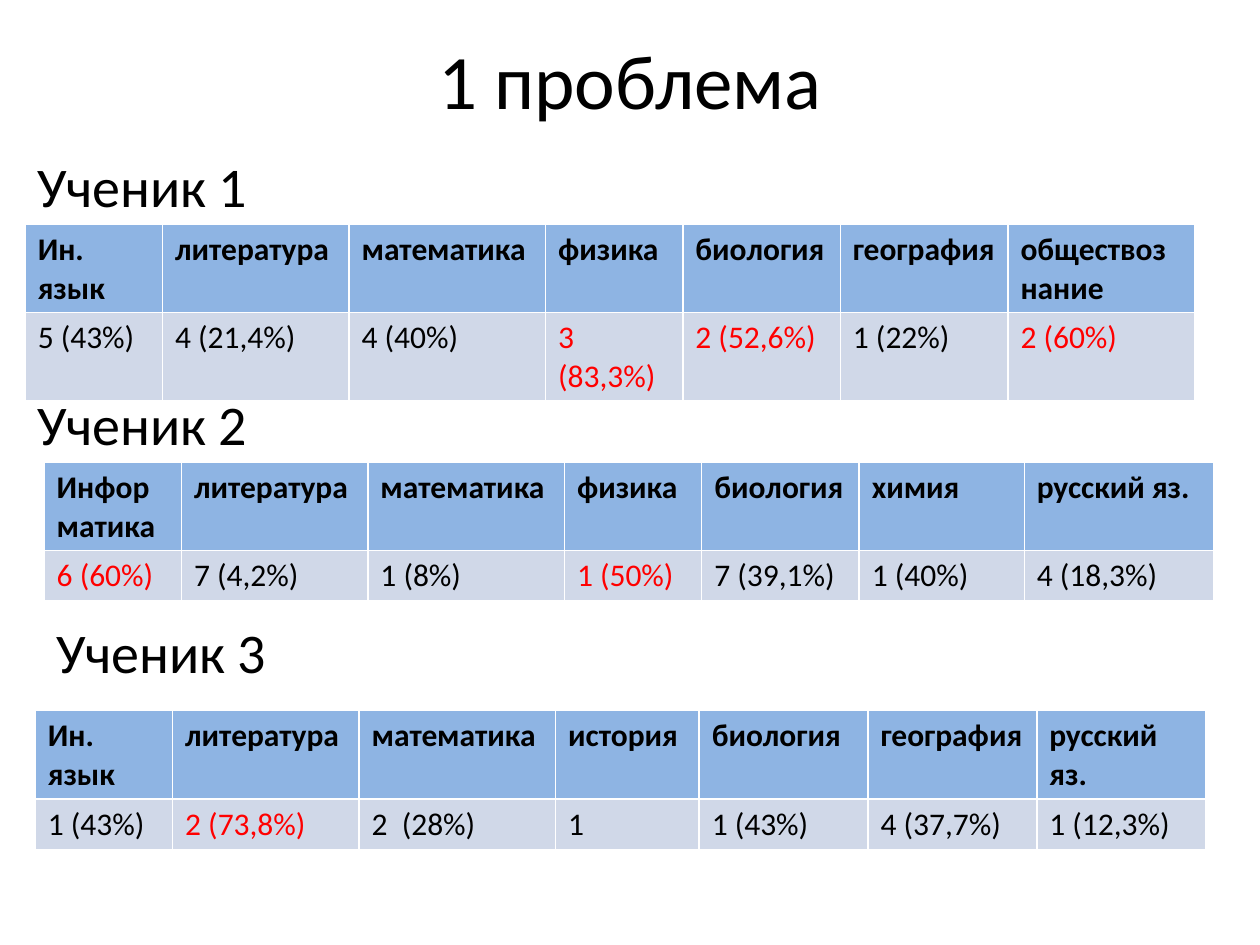
from dataclasses import dataclass

from pptx import Presentation
from pptx.dml.color import RGBColor
from pptx.enum.text import MSO_ANCHOR, PP_ALIGN
from pptx.slide import Slide
from pptx.text.text import TextFrame
from pptx.util import Inches, Pt

BLACK = RGBColor(0x00, 0x00, 0x00)
RED = RGBColor(0xFF, 0x00, 0x00)
HEADER_BLUE = RGBColor(0x8E, 0xB4, 0xE3)
ROW_BLUE = RGBColor(0xD0, 0xD8, 0xE8)
FONT = "Calibri"
ROW_HEIGHTS = (0.65, 0.37)


@dataclass(frozen=True)
class Label:
    text: str
    left: float
    top: float
    width: float


@dataclass(frozen=True)
class Grades:
    left: float
    top: float
    widths: tuple[float, ...]
    subjects: tuple[str, ...]
    marks: tuple[str, ...]
    flagged: tuple[int, ...]


LABELS = (
    Label("Ученик 1", 0.2, 1.15, 9),
    Label("Ученик 2", 0.2, 3.04, 5.12),
    Label("Ученик 3", 0.35, 4.85, 6.22),
)

TABLES = (
    Grades(
        0.2, 1.78, (1.09, 1.48, 1.56, 1.09, 1.25, 1.33, 1.48),
        ("Ин. язык", "литература", "математика", "физика", "биология",
         "география", "обществознание"),
        ("5 (43%)", "4 (21,4%)", "4 (40%)", "3 (83,3%)", "2 (52,6%)",
         "1 (22%)", "2 (60%)"),
        (3, 4, 6),
    ),
    Grades(
        0.35, 3.67, (1.09, 1.48, 1.56, 1.09, 1.25, 1.31, 1.5),
        ("Информатика", "литература", "математика", "физика", "биология",
         "химия", "русский яз."),
        ("6 (60%)", "7 (4,2%)", "1 (8%)", "1 (50%)", "7 (39,1%)",
         "1 (40%)", "4 (18,3%)"),
        (0, 3),
    ),
    Grades(
        0.28, 5.64, (1.09, 1.48, 1.56, 1.14, 1.34, 1.34, 1.34),
        ("Ин. язык", "литература", "математика", "история", "биология",
         "география", "русский яз."),
        ("1 (43%)", "2 (73,8%)", "2  (28%)", "1", "1 (43%)",
         "4 (37,7%)", "1 (12,3%)"),
        (1,),
    ),
)


def write(tf: TextFrame, text: str, size: float,
          color: RGBColor = BLACK, bold: bool = False) -> None:
    tf.text = text
    font = tf.paragraphs[0].runs[0].font
    font.name = FONT
    font.size = Pt(size)
    font.bold = bold
    font.color.rgb = color


def add_title(s: Slide, text: str) -> None:
    sp = s.shapes.title
    sp.left, sp.top = Inches(0), Inches(0)
    sp.width, sp.height = Inches(10), Inches(1.25)
    tf = sp.text_frame
    write(tf, text, 44)
    tf.vertical_anchor = MSO_ANCHOR.MIDDLE
    tf.paragraphs[0].alignment = PP_ALIGN.CENTER


def add_label(s: Slide, label: Label) -> None:
    sp = s.shapes.add_textbox(Inches(label.left), Inches(label.top),
                              Inches(label.width), Inches(0.64))
    sp.text_frame.word_wrap = True
    write(sp.text_frame, label.text, 32)


def add_grades(s: Slide, grades: Grades) -> None:
    table = s.shapes.add_table(
        len(ROW_HEIGHTS), len(grades.widths), Inches(grades.left),
        Inches(grades.top), Inches(sum(grades.widths)),
        Inches(sum(ROW_HEIGHTS))).table
    for row, height in zip(table.rows, ROW_HEIGHTS):
        row.height = Inches(height)
    for i, width in enumerate(grades.widths):
        table.columns[i].width = Inches(width)
        header, mark = table.cell(0, i), table.cell(1, i)
        write(header.text_frame, grades.subjects[i], 18, bold=True)
        write(mark.text_frame, grades.marks[i], 18,
              RED if i in grades.flagged else BLACK)
        for cell, color in ((header, HEADER_BLUE), (mark, ROW_BLUE)):
            cell.fill.solid()
            cell.fill.fore_color.rgb = color


def main() -> None:
    prs = Presentation()
    prs.slide_width, prs.slide_height = Inches(10), Inches(7.5)
    s = prs.slides.add_slide(prs.slide_layouts[5])
    add_title(s, "1 проблема")
    for label in LABELS:
        add_label(s, label)
    for grades in TABLES:
        add_grades(s, grades)
    prs.save("out.pptx")


if __name__ == "__main__":
    main()
